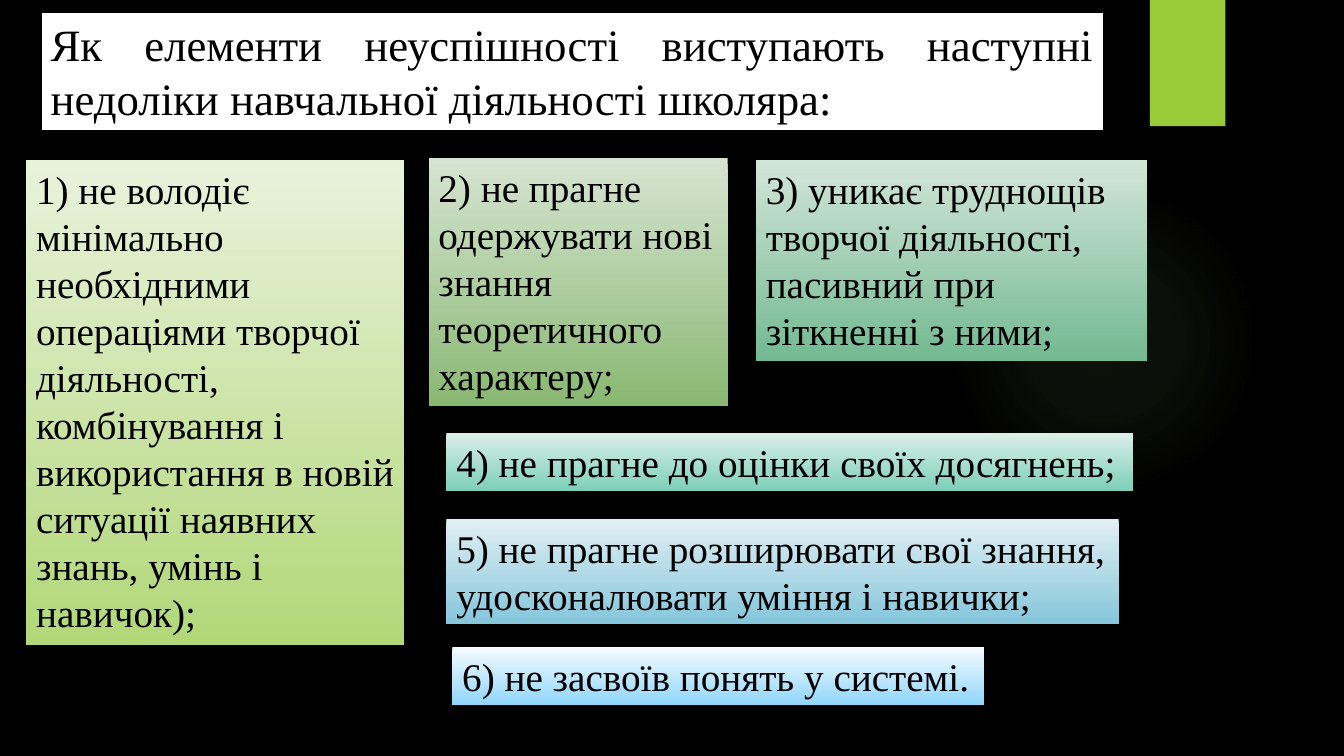
from pptx import Presentation
from pptx import util as u
from pptx.dml.color import RGBColor
from pptx.enum import shapes, text
from pptx.oxml import parse_xml
from pptx.oxml.ns import nsdecls

TITLE = "Як елементи неуспішності виступають наступні недоліки навчальної діяльності школяра:"
HEAD = (1.02, 0.3, 26.8, 3)
GLOW = (23.9, 4.65, 7.82, 7.82)
TAB = (28.98, 0, 1.9, 3.18)
FLAWS = [
    ("1) не володіє мінімально необхідними операціями творчої діяльності, "
     "комбінування і використання в новій ситуації наявних знань, умінь і навичок);",
     (0.66, 4.04, 9.53, 12.22), ("E8F2DB", "B2D778")),
    ("2) не прагне одержувати нові знання теоретичного характеру;",
     (10.8, 3.99, 7.54, 6.25), ("D6E4D1", "89B872")),
    ("3) уникає труднощів творчої діяльності, пасивний при зіткненні з ними;",
     (19.05, 4.04, 9.86, 5.05), ("D2E5D9", "73B991")),
    ("4) не прагне до оцінки своїх досягнень;",
     (11.25, 10.92, 17.3, 1.45), ("DAEFE8", "7DCFB9")),
    ("5) не прагне розширювати свої знання, удосконалювати уміння і навички;",
     (11.25, 13.08, 16.94, 2.64), ("E1EFF4", "85C6DB")),
    ("6) не засвоїв понять у системі.",
     (11.4, 16.31, 13.41, 1.45), ("F5FBFF", "91D6FB")),
]


class Theme:
    font = "Times New Roman"
    black = RGBColor.from_string("000000")
    white = RGBColor.from_string("FFFFFF")
    lime = RGBColor.from_string("99CB38")
    glow = "C2E088"
    fade = [(0, 7), (36, 6), (69, 0)]
    head = 32
    body = 28
    lead = 1.2


def place(shape, box):
    shape.left, shape.top, shape.width, shape.height = map(u.Cm, box)


def write(shape, words, size, align):
    frame = shape.text_frame
    frame.text = words
    frame.word_wrap = True
    frame.auto_size = text.MSO_AUTO_SIZE.NONE
    frame.vertical_anchor = text.MSO_ANCHOR.TOP
    para = frame.paragraphs[0]
    para.alignment = align
    para.line_spacing = u.Pt(size * Theme.lead)
    font = para.runs[0].font
    font.name, font.size = Theme.font, u.Pt(size)
    font.color.rgb = Theme.black


def draw(slide, kind, box):
    shape = slide.shapes.add_shape(kind, *map(u.Cm, box))
    shape.shadow.inherit = False
    shape.line.fill.background()
    return shape


def shine(shape):
    stops = "".join(
        f'<a:gs pos="{pos * 1000}"><a:srgbClr val="{Theme.glow}">'
        f'<a:alpha val="{alpha * 1000}"/></a:srgbClr></a:gs>'
        for pos, alpha in Theme.fade)
    shape._element.spPr.insert(2, parse_xml(
        f'<a:gradFill {nsdecls("a")}><a:gsLst>{stops}</a:gsLst><a:path path="circle">'
        '<a:fillToRect l="50000" t="50000" r="50000" b="50000"/></a:path></a:gradFill>'))


def main():
    deck = Presentation()
    deck.slide_width, deck.slide_height = u.Cm(33.87), u.Cm(19.05)
    slide = deck.slides.add_slide(deck.slide_layouts[5])
    slide.background.fill.solid()
    slide.background.fill.fore_color.rgb = Theme.black

    rect = shapes.MSO_SHAPE.RECTANGLE
    shine(draw(slide, shapes.MSO_SHAPE.OVAL, GLOW))
    tab = draw(slide, rect, TAB)
    tab.fill.solid()
    tab.fill.fore_color.rgb = Theme.lime

    title = slide.shapes.title
    place(title, HEAD)
    title.fill.solid()
    title.fill.fore_color.rgb = Theme.white
    title.line.color.rgb = Theme.black
    title.line.width = u.Pt(1.5)
    write(title, TITLE, Theme.head, text.PP_ALIGN.JUSTIFY)

    for words, box, tints in FLAWS:
        card = draw(slide, rect, box)
        card.fill.gradient()
        card.fill.gradient_angle = 270
        for stop, tint in zip(card.fill.gradient_stops, tints):
            stop.color.rgb = RGBColor.from_string(tint)
        write(card, words, Theme.body, text.PP_ALIGN.LEFT)

    deck.save("out.pptx")


if __name__ == "__main__":
    main()
